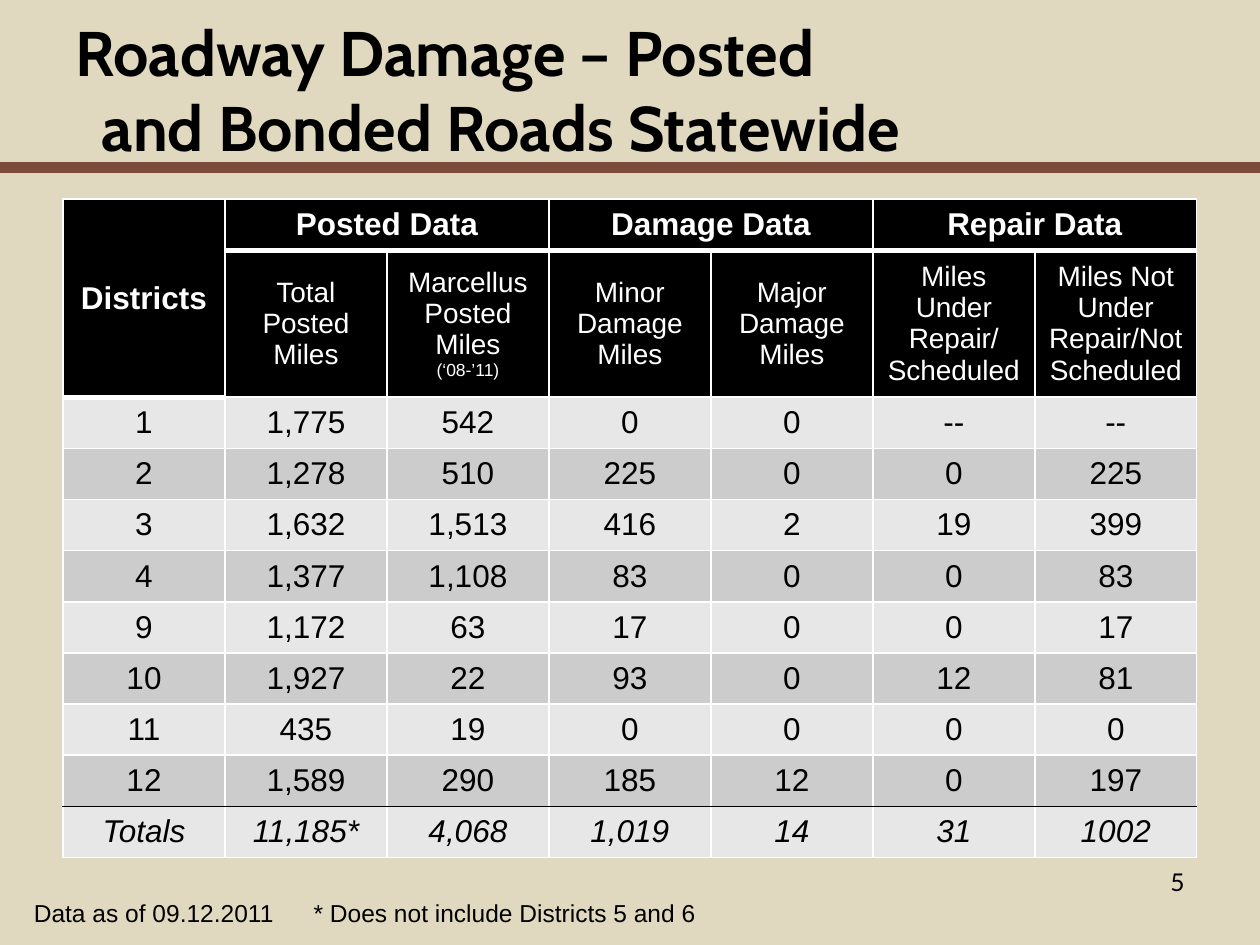
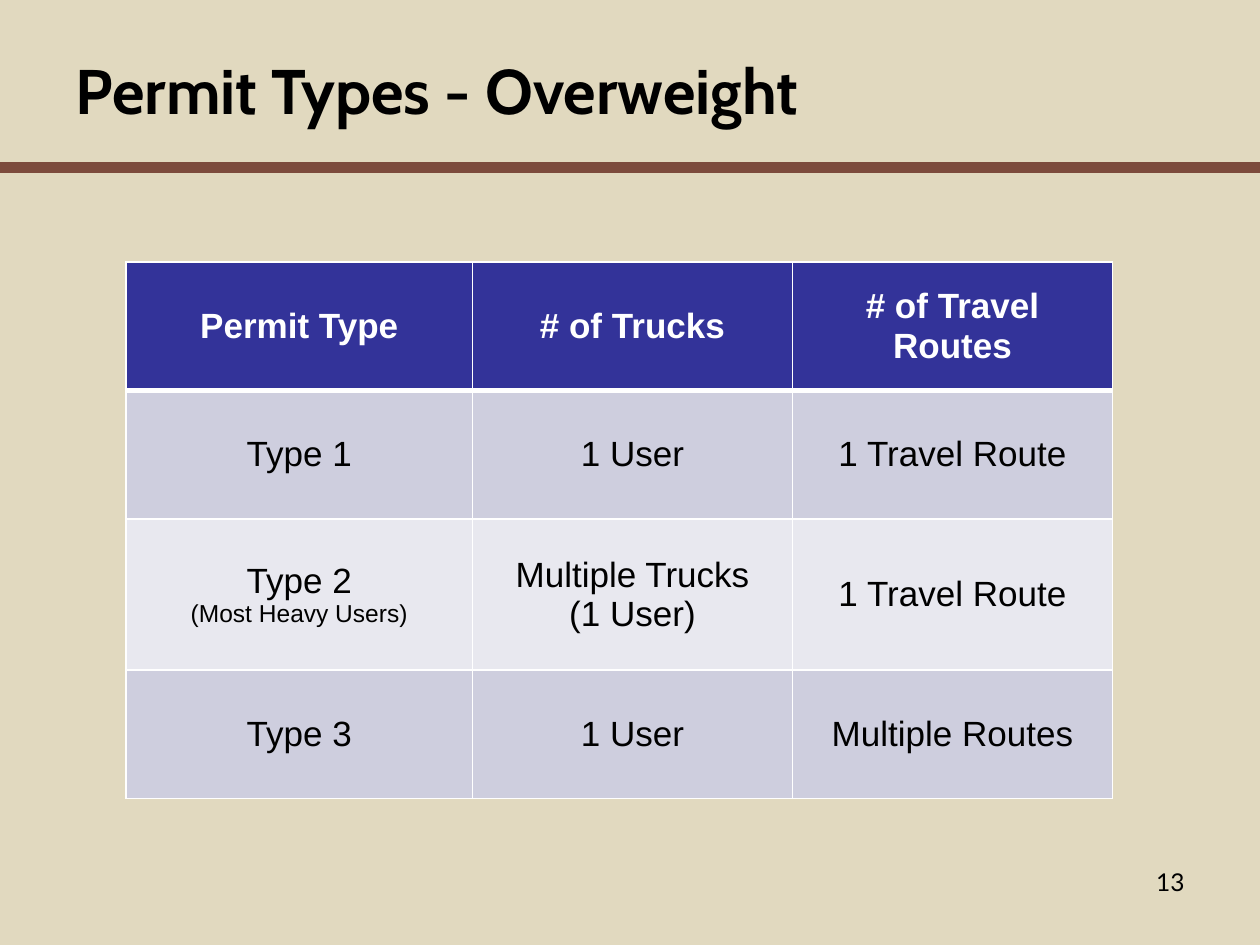
from dataclasses import dataclass

from lxml.etree import SubElement
from pptx import Presentation
from pptx.dml.color import RGBColor
from pptx.enum.shapes import MSO_CONNECTOR
from pptx.enum.text import MSO_ANCHOR as Anchor, PP_ALIGN as Align
from pptx.oxml.ns import qn
from pptx.util import Inches, Pt


@dataclass(frozen=True)
class Theme:
    sand: str = "E1D9BF"
    rust: str = "7C4B3C"
    black: str = "000000"
    white: str = "FFFFFF"
    navy: str = "333399"
    grays: tuple = ("E7E7E7", "CCCCCC")
    lilacs: tuple = ("CECEDE", "E8E8EF")
    title_font: str = "Cabin"
    body_font: str = "Arial"
    number_font: str = "Lato"
    title: int = 36
    permit: int = 20
    figure: int = 18
    subhead: int = 16
    note: int = 14
    years: int = 10


THEME = Theme()

# Cell text: a string with one line per paragraph, or (main text, small last line).
ROADS = {
    "title": "Roadway Damage – Posted\nand Bonded Roads Statewide",
    "number": "5",
    "corner": "Districts",
    "groups": ["Posted Data", "Damage Data", "Repair Data"],
    "measures": [
        "Total\nPosted Miles",
        ("Marcellus Posted Miles", "(‘08-’11)"),
        "Minor Damage Miles",
        "Major Damage Miles",
        "Miles Under Repair/\nScheduled",
        "Miles Not Under Repair/Not Scheduled",
    ],
    "districts": [
        ("1", "1,775", "542", "0", "0", "--", "--"),
        ("2", "1,278", "510", "225", "0", "0", "225"),
        ("3", "1,632", "1,513", "416", "2", "19", "399"),
        ("4", "1,377", "1,108", "83", "0", "0", "83"),
        ("9", "1,172", "63", "17", "0", "0", "17"),
        ("10", "1,927", "22", "93", "0", "12", "81"),
        ("11", "435", "19", "0", "0", "0", "0"),
        ("12", "1,589", "290", "185", "12", "0", "197"),
    ],
    "totals": ("Totals", "11,185*", "4,068", "1,019", "14", "31", "1002"),
    "footnote": "Data as of 09.12.2011\t* Does not include Districts 5 and 6",
}

PERMITS = {
    "title": "Permit Types - Overweight",
    "number": "13",
    "headings": ["Permit Type", "# of Trucks", "# of Travel Routes"],
    "types": [
        ("Type 1", "1 User", "1 Travel Route"),
        (("Type 2", "(Most Heavy Users)"), "Multiple Trucks\n(1 User)", "1 Travel Route"),
        ("Type 3", "1 User", "Multiple Routes"),
    ],
}


def rgb(color):
    return RGBColor.from_string(color)


def write(frame, text, size, small=None, font=THEME.body_font, color=THEME.black,
          bold=False, italic=False, align=Align.LEFT, hanging=None, tab=None):
    """Fill a text frame; hanging indents the later lines, tab sets one tab stop."""
    if isinstance(text, tuple):
        lines = [(text[0], size), (text[1], small)]
    else:
        lines = [(line, size) for line in text.split("\n")]
    frame.word_wrap = True
    for index, (line, line_size) in enumerate(lines):
        paragraph = frame.add_paragraph() if index else frame.paragraphs[0]
        properties = paragraph._p.get_or_add_pPr()
        if hanging and index:
            properties.set("marL", str(hanging))
        if tab:
            stops = SubElement(properties, qn("a:tabLst"))
            SubElement(stops, qn("a:tab"), pos=str(tab), algn="l")
        paragraph.alignment = align
        run = paragraph.add_run()
        run.text = line
        run.font.name, run.font.size = font, Pt(line_size)
        run.font.bold, run.font.italic = bold, italic
        run.font.color.rgb = rgb(color)


def text_box(slide, place, text, size, anchor=Anchor.TOP, **style):
    frame = slide.shapes.add_textbox(*map(Inches, place)).text_frame
    frame.vertical_anchor = anchor
    write(frame, text, size, **style)


def style_cell(cell, fill, top=(THEME.white, 1), bottom=(THEME.white, 1)):
    """Draw the borders, given as (colour, points), then the fill."""
    thin = (THEME.white, 1)
    properties = cell._tc.get_or_add_tcPr()
    for side, (color, width) in zip("LRTB", (thin, thin, top, bottom)):
        line = SubElement(properties, qn(f"a:ln{side}"), w=str(Pt(width)))
        SubElement(SubElement(line, qn("a:solidFill")), qn("a:srgbClr"), val=color)
    cell.fill.solid()
    cell.fill.fore_color.rgb = rgb(fill)
    cell.vertical_anchor = Anchor.MIDDLE


def add_grid(slide, left, top, widths, heights):
    table = slide.shapes.add_table(
        len(heights), len(widths), Inches(left), Inches(top),
        Inches(sum(widths)), Inches(sum(heights))).table
    table.first_row = table.horz_banding = False
    for column, width in zip(table.columns, widths):
        column.width = Inches(width)
    for row, height in zip(table.rows, heights):
        row.height = Inches(height)
    return table


def write_row(table, row, texts, size, first=0, **style):
    for column, text in enumerate(texts, first):
        write(table.cell(row, column).text_frame, text, size, align=Align.CENTER, **style)


def start_slide(prs, content):
    """Add a slide with the shared rule, title and page number."""
    slide = prs.slides.add_slide(prs.slide_layouts[6])
    rule = slide.shapes.add_connector(
        MSO_CONNECTOR.STRAIGHT, Inches(-0.08), Inches(1.33), Inches(10.17), Inches(1.33))
    rule.line.color.rgb, rule.line.width = rgb(THEME.rust), Pt(6)
    SubElement(rule._element.spPr, qn("a:effectLst"))
    text_box(slide, (0.5, 0.08, 9, 1.25), content["title"], THEME.title, anchor=Anchor.MIDDLE,
             font=THEME.title_font, bold=True, hanging=Inches(0.21))
    text_box(slide, (7.17, 6.83, 2.33, 0.52), content["number"], THEME.note,
             font=THEME.number_font, align=Align.RIGHT)
    return slide


def build_roads(prs):
    slide = start_slide(prs, ROADS)
    districts, measures = ROADS["districts"], ROADS["measures"]
    columns, totals_row = len(measures) + 1, len(districts) + 2
    measure_height, table_height = 1.09, 5.15
    row_height = (table_height - measure_height) / totals_row
    heights = [row_height, measure_height] + [row_height] * (totals_row - 1)
    table = add_grid(slide, 0.5, 1.58, [9 / columns] * columns, heights)

    thin, thick, total_line = (THEME.white, 1), (THEME.white, 3), (THEME.black, 1)
    for row in range(totals_row + 1):
        for column in range(columns):
            heading_end = row == 0 or (row == 1 and column == 0)
            style_cell(
                table.cell(row, column),
                THEME.black if row < 2 else THEME.grays[row % 2],
                top=total_line if row == totals_row else thick if row == 1 and column else thin,
                bottom=thick if heading_end else total_line if row == totals_row - 1 else thin)

    table.cell(0, 0).merge(table.cell(1, 0))
    heading = dict(color=THEME.white, bold=True)
    write_row(table, 0, [ROADS["corner"]], THEME.figure, **heading)
    for column, group in enumerate(ROADS["groups"]):
        start = 1 + 2 * column
        table.cell(0, start).merge(table.cell(0, start + 1))
        write_row(table, 0, [group], THEME.figure, first=start, **heading)
    write_row(table, 1, measures, THEME.subhead, first=1, small=THEME.years, color=THEME.white)
    for row, district in enumerate(districts, 2):
        write_row(table, row, district, THEME.figure)
    write_row(table, totals_row, ROADS["totals"], THEME.figure, italic=True)

    text_box(slide, (0.17, 7.08, 5.75, 0.34), ROADS["footnote"], THEME.note, tab=Inches(2.22))


def build_permits(prs):
    slide = start_slide(prs, PERMITS)
    table = add_grid(slide, 1, 2.08, [2.75, 2.54, 2.54], [1.02, 1.02, 1.2, 1.02])
    thick = (THEME.white, 3)
    for cell in table.rows[0].cells:
        style_cell(cell, THEME.navy, bottom=thick)
    write_row(table, 0, PERMITS["headings"], THEME.permit, color=THEME.white, bold=True)
    for row, permit in enumerate(PERMITS["types"], 1):
        for cell in table.rows[row].cells:
            style_cell(cell, THEME.lilacs[(row - 1) % 2],
                       top=thick if row == 1 else (THEME.white, 1))
        write_row(table, row, permit, THEME.permit, small=THEME.note)


def main():
    prs = Presentation()
    prs.slide_width, prs.slide_height = Inches(10), Inches(7.5)
    backdrop = prs.slide_master.background.fill
    backdrop.solid()
    backdrop.fore_color.rgb = rgb(THEME.sand)
    build_roads(prs)
    build_permits(prs)
    prs.save("out.pptx")


if __name__ == "__main__":
    main()
